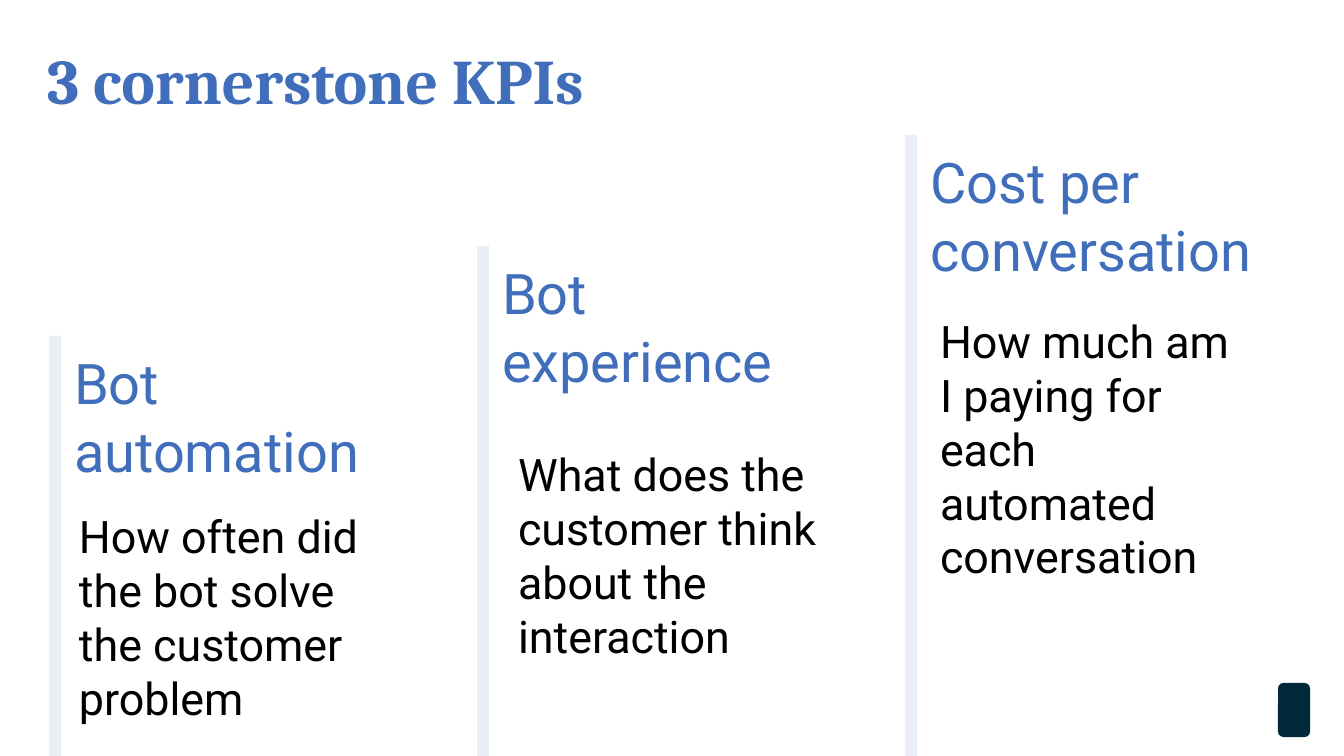
from dataclasses import dataclass

from pptx import Presentation
from pptx import util as u
from pptx.dml.color import RGBColor
from pptx.enum import shapes, text

SCALE = u.Inches(10) / 1344
WIDTH, HEIGHT = 1344, 756
INSET = 13


def px(length):
    return u.Emu(round(length * SCALE))


@dataclass(frozen=True)
class Theme:
    accent: str = "416EBA"
    bar: str = "EAEFF7"
    body: str = "000000"
    badge: str = "002939"
    title_font: str = "Cambria"
    text_font: str = "Roboto"
    title_size: int = 34
    heading_size: int = 30
    body_size: int = 24


class SlideBuilder:
    def __init__(self, slide, theme):
        self.slide = slide
        self.theme = theme

    def fill_text(self, shape, words, font, size, color, bold=False):
        frame = shape.text_frame
        frame.word_wrap = True
        frame.auto_size = text.MSO_AUTO_SIZE.NONE
        frame.vertical_anchor = text.MSO_ANCHOR.TOP
        frame.margin_left = frame.margin_right = px(INSET)
        frame.margin_top = frame.margin_bottom = px(INSET)
        paragraph = frame.paragraphs[0]
        paragraph.alignment = text.PP_ALIGN.LEFT
        run = paragraph.add_run()
        run.text = words
        run.font.name = font
        run.font.size = u.Pt(size)
        run.font.bold = bold
        run.font.color.rgb = RGBColor.from_string(color)

    def title(self, words, left, top, width, height):
        shape = self.slide.shapes.title
        shape.left, shape.top = px(left), px(top)
        shape.width, shape.height = px(width), px(height)
        theme = self.theme
        self.fill_text(shape, words, theme.title_font, theme.title_size, theme.accent, bold=True)

    def text_box(self, words, left, top, width, height, size, color):
        shape = self.slide.shapes.add_textbox(px(left), px(top), px(width), px(height))
        self.fill_text(shape, words, self.theme.text_font, size, color)

    def block(self, left, top, width, height, color, kind=shapes.MSO_SHAPE.RECTANGLE):
        shape = self.slide.shapes.add_shape(kind, px(left), px(top), px(width), px(height))
        shape.shadow.inherit = False
        shape.fill.solid()
        shape.fill.fore_color.rgb = RGBColor.from_string(color)
        shape.line.fill.background()

    def kpi(self, left, top, heading, question, question_left, question_top):
        """Add a bar running to the slide's foot, with a heading and a question beside it."""
        theme = self.theme
        bar_width = 12
        self.block(left, top, bar_width, HEIGHT - top, theme.bar)
        self.text_box(heading, left + bar_width, top, 355, HEIGHT - top,
                      theme.heading_size, theme.accent)
        self.text_box(question, question_left, question_top, 333, 725 - question_top,
                      theme.body_size, theme.body)


KPIS = [
    # bar top, heading, question, question left, question top
    (336, "Bot automation", "How often did the bot solve the customer problem", 66, 496),
    (246, "Bot experience", "What does the customer think about the interaction", 505, 434),
    (135, "Cost per conversation", "How much am I paying for each automated conversation", 927, 301),
]
FIRST_BAR, BAR_STEP = 49, 428


def main():
    presentation = Presentation()
    presentation.slide_width, presentation.slide_height = px(WIDTH), px(HEIGHT)
    title_only = presentation.slide_layouts[5]
    theme = Theme()
    builder = SlideBuilder(presentation.slides.add_slide(title_only), theme)

    builder.block(1278, 683, 32, 54, theme.badge, shapes.MSO_SHAPE.ROUNDED_RECTANGLE)
    builder.title("3 cornerstone KPIs", 34, 28, 1276, 81)
    for column, (top, *content) in enumerate(KPIS):
        builder.kpi(FIRST_BAR + column * BAR_STEP, top, *content)

    presentation.save("out.pptx")


if __name__ == "__main__":
    main()
